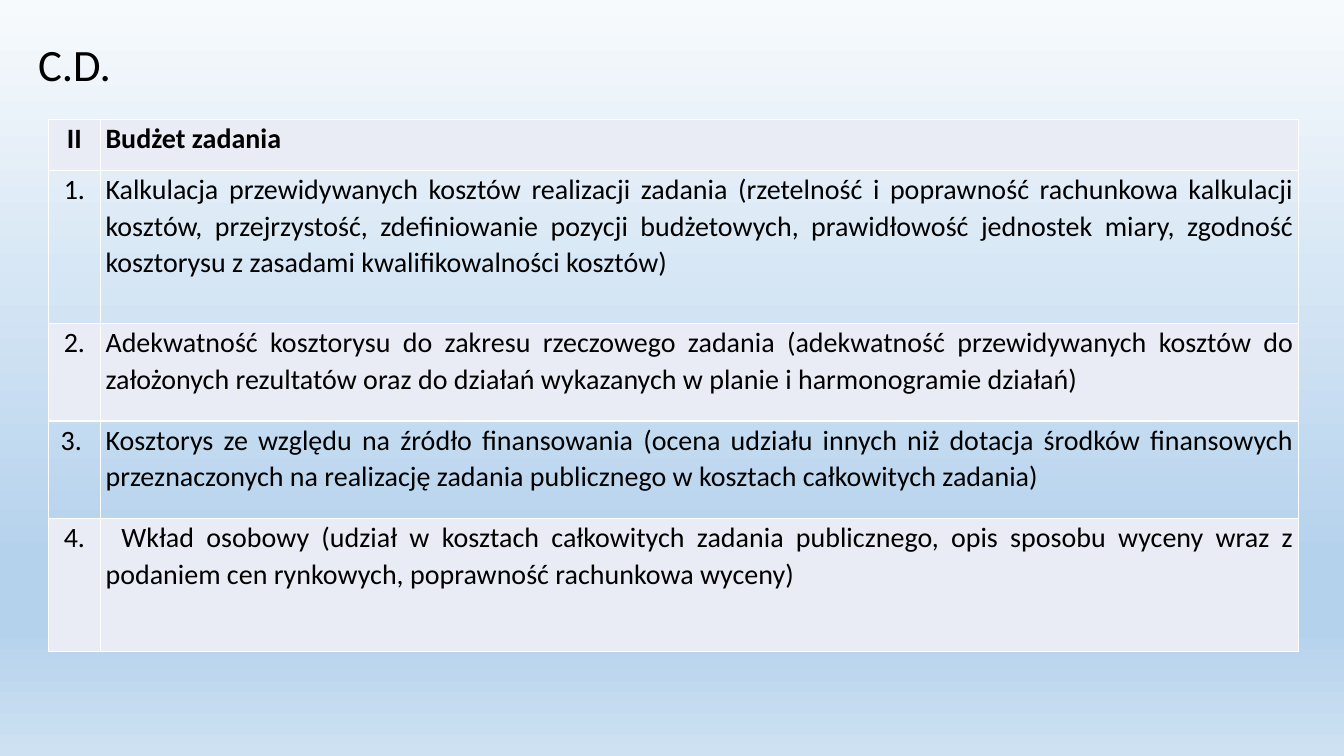
from dataclasses import dataclass

from lxml.etree import SubElement
from pptx import Presentation
from pptx.dml.color import RGBColor
from pptx.enum.text import MSO_ANCHOR, PP_ALIGN
from pptx.oxml.ns import qn
from pptx.slide import Slide
from pptx.table import _Cell
from pptx.text.text import _Paragraph
from pptx.util import Cm, Pt

COLORS = {
    "text": "000000",
    "band": "E9EBF5",
    "border": "FFFFFF",
    "sky_top": "F7FAFD",
    "sky_deep": "B5D2EC",
    "sky_bottom": "CEE1F2",
}
GRADIENT_STOPS = [(0, "sky_top"), (74, "sky_deep"), (83, "sky_deep"), (100, "sky_bottom")]
COLUMN_WIDTHS = [1.31, 30.2]
CELL_MARGINS = {
    "margin_left": Cm(0.13),
    "margin_right": Cm(0.13),
    "margin_top": 0,
    "margin_bottom": 0,
}


@dataclass
class Criterion:
    number: str
    description: str
    height: float
    alignment: PP_ALIGN = PP_ALIGN.JUSTIFY
    bold: bool = False
    space_after: float = 0
    indent: float = 0


CRITERIA = [
    Criterion("II", "Budżet zadania", 1.27, PP_ALIGN.LEFT, bold=True, space_after=8),
    Criterion(
        "1.",
        "Kalkulacja przewidywanych kosztów realizacji zadania (rzetelność i poprawność "
        "rachunkowa kalkulacji kosztów, przejrzystość, zdefiniowanie pozycji budżetowych, "
        "prawidłowość jednostek miary, zgodność kosztorysu z zasadami kwalifikowalności kosztów)",
        3.86,
    ),
    Criterion(
        "2.",
        "Adekwatność kosztorysu do zakresu rzeczowego zadania (adekwatność przewidywanych "
        "kosztów do założonych rezultatów oraz do działań wykazanych w planie i harmonogramie działań)",
        2.46,
    ),
    Criterion(
        "3. ",
        "Kosztorys ze względu na źródło finansowania (ocena udziału innych niż dotacja środków "
        "finansowych przeznaczonych na realizację zadania publicznego w kosztach całkowitych zadania)",
        2.46,
        space_after=8,
    ),
    Criterion(
        "4.",
        "Wkład osobowy (udział w kosztach całkowitych zadania publicznego, opis sposobu wyceny "
        "wraz z podaniem cen rynkowych, poprawność rachunkowa wyceny)",
        3.35,
        indent=0.4,
    ),
]


def apply_format(target: object, values: dict) -> None:
    for name, value in values.items():
        setattr(target, name, value)


def write_text(paragraph: _Paragraph, text: str, size: float, bold: bool, layout: dict) -> None:
    run = paragraph.add_run()
    run.text = text
    apply_format(run.font, {"name": "Calibri", "size": Pt(size), "bold": bold})
    run.font.color.rgb = RGBColor.from_string(COLORS["text"])
    apply_format(paragraph, layout)


def paint_background(slide: Slide) -> None:
    fill = slide.background.fill
    fill.gradient()
    fill.gradient_angle = 270
    stop_list = next(slide.element.iter(qn("a:gsLst")))
    for stop in list(stop_list):
        stop_list.remove(stop)
    for position, color in GRADIENT_STOPS:
        stop = SubElement(stop_list, qn("a:gs"), pos=str(position * 1000))
        SubElement(stop, qn("a:srgbClr"), val=COLORS[color])


def add_title(slide: Slide, text: str) -> None:
    title = slide.shapes.add_textbox(Cm(0.71), Cm(1.02), Cm(30.81), Cm(1.35))
    frame = title.text_frame
    apply_format(frame, {"word_wrap": True, "vertical_anchor": MSO_ANCHOR.MIDDLE})
    write_text(frame.paragraphs[0], text, 32, False, {"line_spacing": 0.9})


def style_cell(cell: _Cell, banded: bool) -> None:
    apply_format(cell, CELL_MARGINS)
    properties = cell._tc.get_or_add_tcPr()
    for side in ("a:lnL", "a:lnR", "a:lnT", "a:lnB"):
        line = SubElement(properties, qn(side), w=str(Pt(1)))
        solid = SubElement(line, qn("a:solidFill"))
        SubElement(solid, qn("a:srgbClr"), val=COLORS["border"])
    if banded:
        cell.fill.solid()
        cell.fill.fore_color.rgb = RGBColor.from_string(COLORS["band"])
    else:
        cell.fill.background()


def add_criteria_table(slide: Slide, criteria: list[Criterion]) -> None:
    width = sum(COLUMN_WIDTHS)
    height = sum(criterion.height for criterion in criteria)
    table = slide.shapes.add_table(
        len(criteria), len(COLUMN_WIDTHS), Cm(1.22), Cm(3.02), Cm(width), Cm(height)
    ).table
    apply_format(table, {"first_row": False, "horz_banding": False})
    for column, column_width in zip(table.columns, COLUMN_WIDTHS):
        column.width = Cm(column_width)
    for index, criterion in enumerate(criteria):
        table.rows[index].height = Cm(criterion.height)
        number_cell, description_cell = table.rows[index].cells
        for cell in (number_cell, description_cell):
            style_cell(cell, banded=index % 2 == 0)
        write_text(
            number_cell.text_frame.paragraphs[0], criterion.number, 20, criterion.bold,
            {"alignment": PP_ALIGN.CENTER, "line_spacing": 1.07, "space_after": Pt(8)},
        )
        paragraph = description_cell.text_frame.paragraphs[0]
        write_text(
            paragraph, criterion.description, 20, criterion.bold,
            {
                "alignment": criterion.alignment,
                "line_spacing": 1.07,
                "space_after": Pt(criterion.space_after),
            },
        )
        if criterion.indent:
            paragraph._p.get_or_add_pPr().set("indent", str(Cm(criterion.indent)))


def main() -> None:
    presentation = Presentation()
    apply_format(presentation, {"slide_width": Cm(33.87), "slide_height": Cm(19.05)})
    slide = presentation.slides.add_slide(presentation.slide_layouts[6])
    paint_background(slide)
    add_title(slide, "C.D.")
    add_criteria_table(slide, CRITERIA)
    presentation.save("out.pptx")


if __name__ == "__main__":
    main()
